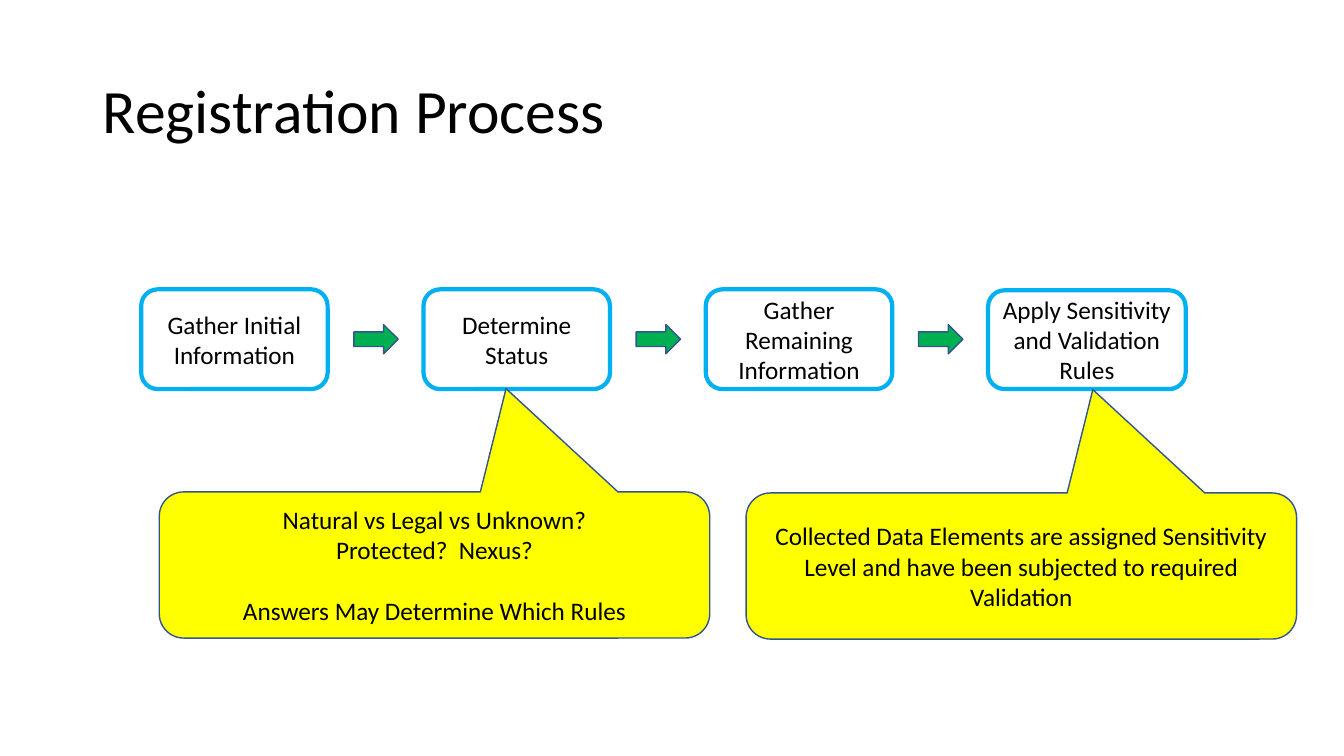
"""Build the Registration Process slide: four steps, arrows and two callouts."""
from dataclasses import dataclass

from pptx import Presentation
from pptx.dml.color import RGBColor
from pptx.enum.shapes import MSO_SHAPE as SHAPE
from pptx.enum.text import MSO_ANCHOR as ANCHOR, PP_ALIGN as ALIGN
from pptx.util import Pt

TITLE = "Registration Process"
STEPS = [
    ("Gather Initial Information", 287, 185, 99),
    ("Determine Status", 287, 185, 99),
    ("Gather Remaining Information", 287, 185, 99),
    ("Apply Sensitivity and Validation Rules", 288, 196, 98),
]
CALLOUTS = [
    (158, 488, [
        ("Natural vs Legal vs Unknown?", 0),
        ("Protected?  Nexus?", 0),
        ("Answers May Determine Which Rules", 22),
    ]),
    (740, 489, [
        ("Collected Data Elements are assigned Sensitivity Level and have "
         "been subjected to required Validation", 0),
    ]),
]


@dataclass(frozen=True)
class Theme:
    font: str = "Calibri"
    title_size: int = 44
    body_size: int = 18
    text: str = "000000"
    step_fill: str = "FFFFFF"
    step_line: str = "00B0F0"
    arrow_fill: str = "00B050"
    callout_fill: str = "FFFF00"
    outline: str = "325491"


THEME = Theme()
EMU_PER_PX = 9144
STEP_LEFT, STEP_PITCH = 140, 280
ARROW_LEFT, ARROW_TOP, ARROW_W, ARROW_H = 351, 322, 44, 29
CALLOUT_W, CALLOUT_H = 546, 145
CALLOUT_TAIL = (0.13, -1.207, 0.167)


def px(*lengths):
    return [n * EMU_PER_PX for n in lengths]


def set_font(p, size):
    p.font.name = THEME.font
    p.font.size = Pt(size)
    p.font.color.rgb = RGBColor.from_string(THEME.text)


def add_shape(slide, kind, box, fill, line, weight, lines=()):
    sp = slide.shapes.add_shape(kind, *px(*box))
    sp.shadow.inherit = False
    sp.fill.solid()
    sp.fill.fore_color.rgb = RGBColor.from_string(fill)
    sp.line.color.rgb = RGBColor.from_string(line)
    sp.line.width = Pt(weight)
    tf = sp.text_frame
    tf.word_wrap = True
    tf.vertical_anchor = ANCHOR.MIDDLE
    for i, (text, gap) in enumerate(lines):
        p = tf.add_paragraph() if i else tf.paragraphs[0]
        p.text = text
        p.alignment = ALIGN.CENTER
        p.space_before = Pt(gap)
        set_font(p, THEME.body_size)
    return sp


def add_title(slide):
    sp = slide.shapes.title
    sp.left, sp.top, sp.width, sp.height = px(92, 40, 1150, 145)
    tf = sp.text_frame
    tf.text = TITLE
    tf.vertical_anchor = ANCHOR.MIDDLE
    p = tf.paragraphs[0]
    p.alignment = ALIGN.LEFT
    p.line_spacing = 0.9
    set_font(p, THEME.title_size)


def main():
    prs = Presentation()
    prs.slide_width, prs.slide_height = px(1333, 750)
    slide = prs.slides.add_slide(prs.slide_layouts.get_by_name("Title Only"))
    add_title(slide)
    for i, (text, top, w, h) in enumerate(STEPS):
        add_shape(slide, SHAPE.FLOWCHART_ALTERNATE_PROCESS,
                  (STEP_LEFT + i * STEP_PITCH, top, w, h),
                  THEME.step_fill, THEME.step_line, 3, [(text, 0)])
    for i in range(len(STEPS) - 1):
        add_shape(slide, SHAPE.RIGHT_ARROW,
                  (ARROW_LEFT + i * STEP_PITCH, ARROW_TOP, ARROW_W, ARROW_H),
                  THEME.arrow_fill, THEME.outline, 1)
    for left, top, lines in CALLOUTS:
        sp = add_shape(slide, SHAPE.ROUNDED_RECTANGULAR_CALLOUT,
                       (left, top, CALLOUT_W, CALLOUT_H),
                       THEME.callout_fill, THEME.outline, 1, lines)
        for i, value in enumerate(CALLOUT_TAIL):
            sp.adjustments[i] = value
    prs.save("out.pptx")


if __name__ == "__main__":
    main()
